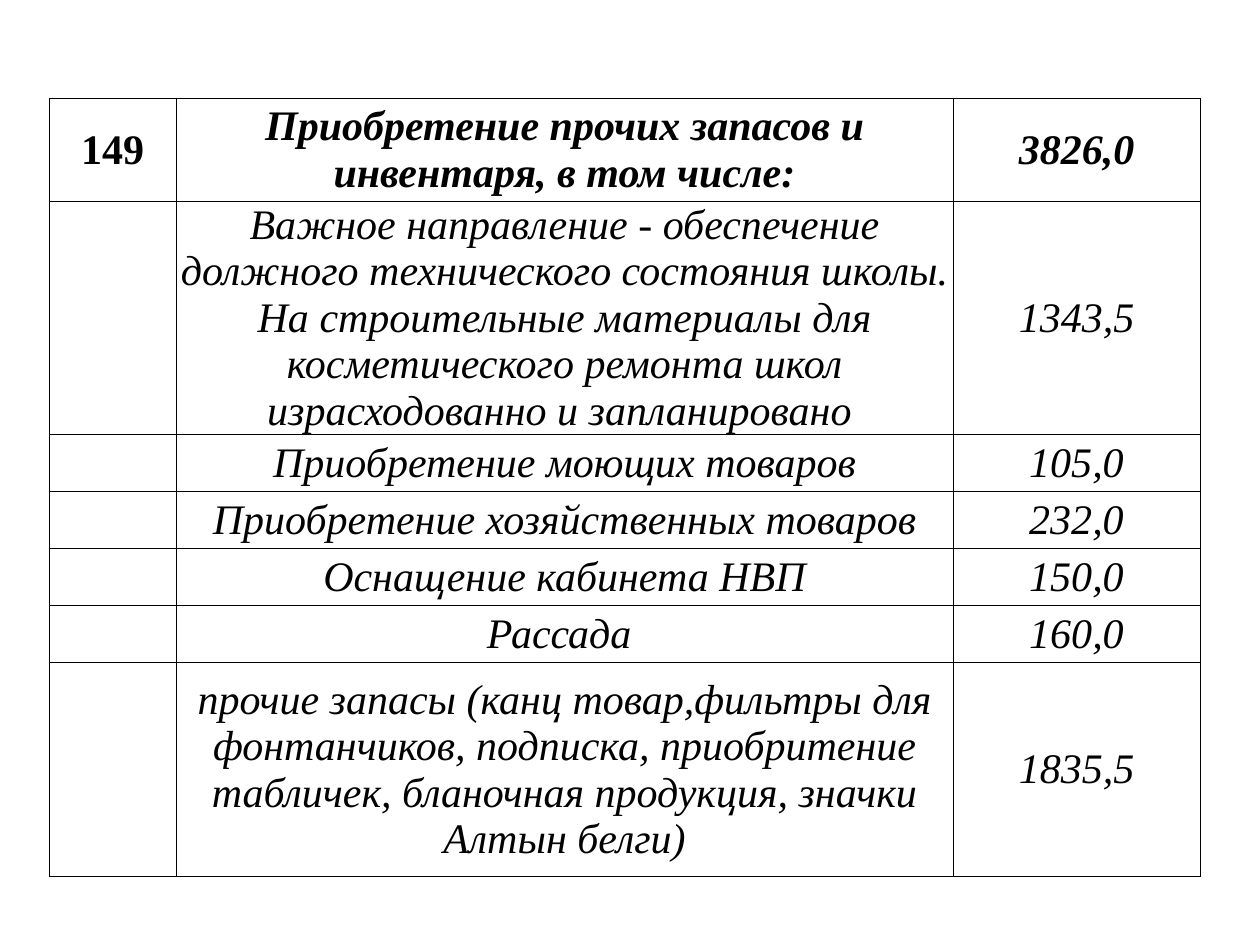
from dataclasses import dataclass

from lxml.etree import SubElement
from pptx import Presentation
from pptx.dml.color import RGBColor
from pptx.enum.text import MSO_ANCHOR, PP_ALIGN
from pptx.oxml.ns import qn
from pptx.table import Table, _Cell
from pptx.util import Emu, Pt

PIXELS_PER_INCH = 126


@dataclass(frozen=True)
class Theme:
    font: str = "Times New Roman"
    text_size: int = 24
    text: str = "000000"
    paper: str = "FFFFFF"
    border: str = "000000"
    border_width: float = 0.5


@dataclass(frozen=True)
class BudgetRow:
    height: int
    item: str
    amount: str
    code: str = ""
    heading: bool = False


THEME = Theme()
TABLE_LEFT, TABLE_TOP = 49, 98
COLUMN_WIDTHS = (127, 777, 247)
LINE_HEIGHT = 57
ROWS = (
    BudgetRow(103, "Приобретение прочих запасов и инвентаря, в том числе:", "3826,0", "149", True),
    BudgetRow(
        233,
        "Важное направление - обеспечение должного технического состояния школы. "
        "На строительные материалы для косметического ремонта школ "
        "израсходованно и запланировано ",
        "1343,5",
    ),
    BudgetRow(LINE_HEIGHT, "Приобретение моющих товаров", "105,0"),
    BudgetRow(LINE_HEIGHT, "Приобретение хозяйственных товаров", "232,0"),
    BudgetRow(LINE_HEIGHT, "Оснащение кабинета НВП", "150,0"),
    BudgetRow(LINE_HEIGHT, "Рассада ", "160,0"),
    BudgetRow(
        214,
        "прочие запасы (канц товар,фильтры для фонтанчиков, подписка, "
        "приобритение табличек, бланочная продукция, значки Алтын белги)",
        "1835,5",
    ),
)


def px(length: int) -> Emu:
    return Emu(round(length * 914400 / PIXELS_PER_INCH))


def add_borders(cell: _Cell) -> None:
    properties = cell._tc.get_or_add_tcPr()
    for side in ("a:lnL", "a:lnR", "a:lnT", "a:lnB"):
        line = SubElement(properties, qn(side), w=str(Pt(THEME.border_width)))
        fill = SubElement(line, qn("a:solidFill"))
        SubElement(fill, qn("a:srgbClr"), val=THEME.border)


def format_cell(cell: _Cell, text: str, bold: bool, italic: bool, filled: bool) -> None:
    add_borders(cell)
    if filled:
        cell.fill.solid()
        cell.fill.fore_color.rgb = RGBColor.from_string(THEME.paper)
    else:
        cell.fill.background()
    cell.vertical_anchor = MSO_ANCHOR.MIDDLE
    cell.margin_left = cell.margin_right = cell.margin_top = px(1)
    cell.margin_bottom = 0
    if not text:
        return
    cell.text_frame.text = text
    para = cell.text_frame.paragraphs[0]
    para.alignment = PP_ALIGN.CENTER
    for span in para.runs:
        span.font.name = THEME.font
        span.font.size = Pt(THEME.text_size)
        span.font.bold = bold
        span.font.italic = italic
        span.font.color.rgb = RGBColor.from_string(THEME.text)


def fill_table(table: Table, rows: tuple[BudgetRow, ...]) -> None:
    table.first_row = table.horz_banding = False
    for column, width in zip(table.columns, COLUMN_WIDTHS):
        column.width = px(width)
    for index, row in enumerate(rows):
        table.rows[index].height = px(row.height)
        for position, text in enumerate((row.code, row.item, row.amount)):
            in_body = position > 0
            format_cell(table.cell(index, position), text, row.heading, in_body, in_body)


def main() -> None:
    # Page
    deck = Presentation()
    deck.slide_width, deck.slide_height = px(1260), px(945)
    page = deck.slides.add_slide(deck.slide_layouts[6])

    # Budget table
    frame = page.shapes.add_table(
        len(ROWS), len(COLUMN_WIDTHS), px(TABLE_LEFT), px(TABLE_TOP),
        px(sum(COLUMN_WIDTHS)), px(sum(row.height for row in ROWS)),
    )
    fill_table(frame.table, ROWS)
    deck.save("out.pptx")


if __name__ == "__main__":
    main()
